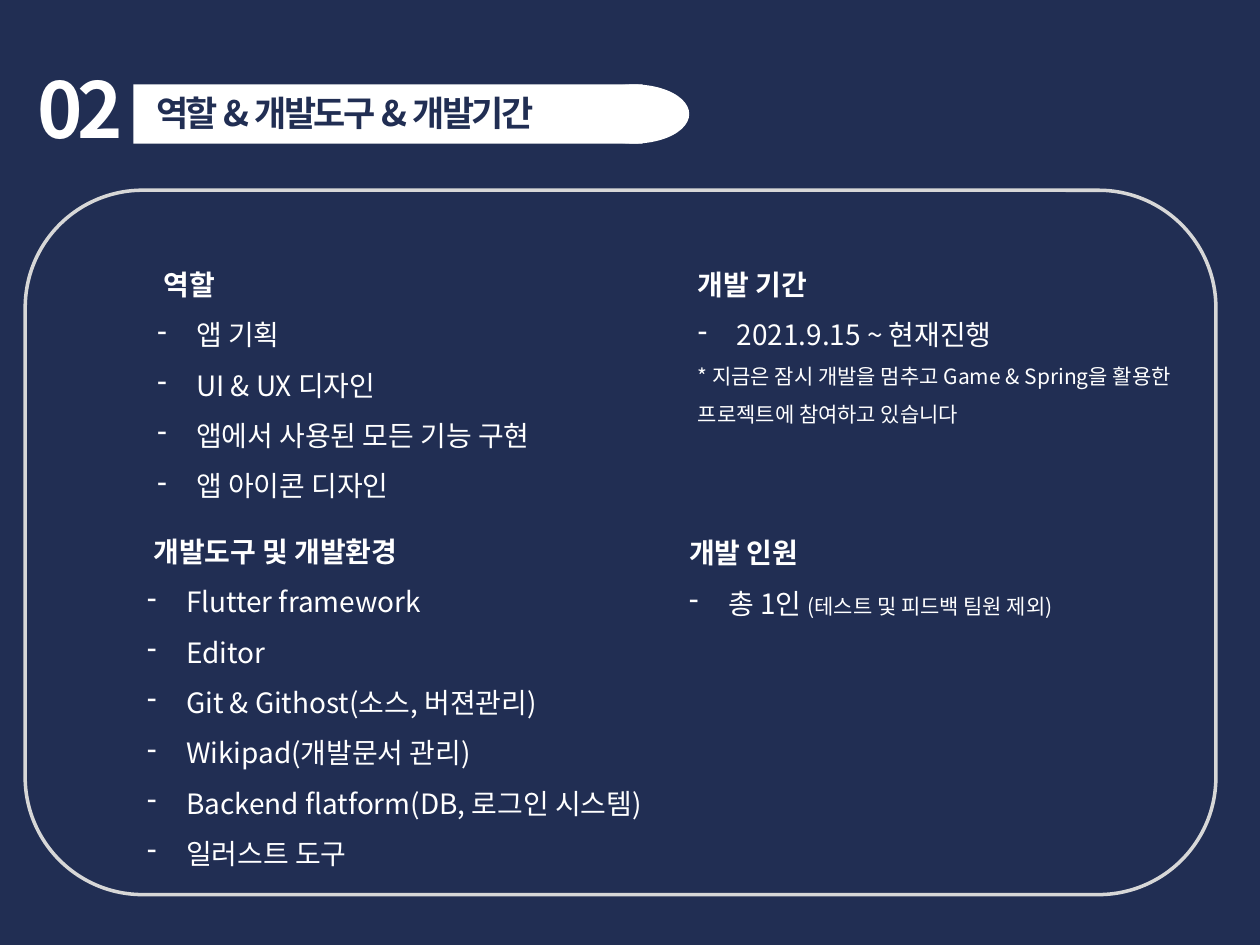
import pptx
import pptx.dml.color
import pptx.enum.shapes
import pptx.enum.text
import pptx.oxml.ns
import pptx.util
from pptx.util import Inches
from lxml import etree

FONT = "Noto Sans CJK KR"
NAVY, WHITE, GRAY = "212E53", "FFFFFF", "D7D7D7"
SHAPES = pptx.enum.shapes.MSO_SHAPE


def color(hex_string):
    return pptx.dml.color.RGBColor.from_string(hex_string)


def add_text(paragraph, text, size=16, bold=False, fill=WHITE, spacing=0):
    """Append a formatted run; spacing is the letter spacing in points."""
    run = paragraph.add_run()
    run.text = text
    run.font.size = pptx.util.Pt(size)
    run.font.bold = bold
    run.font.name = FONT
    run.font.color.rgb = color(fill)
    properties = run.font._element
    if spacing:
        properties.set("spc", str(int(spacing * 100)))
    properties.find(pptx.oxml.ns.qn("a:latin")).addnext(
        properties.makeelement(pptx.oxml.ns.qn("a:ea"), {"typeface": FONT}))


presentation = pptx.Presentation()
presentation.slide_width = Inches(10)
presentation.slide_height = Inches(7.5)
slide = presentation.slides.add_slide(presentation.slide_layouts[6])
slide.background.fill.solid()
slide.background.fill.fore_color.rgb = color(NAVY)

# Title banner: a bar with a rounded right end
banner = slide.shapes.add_group_shape()
for kind, left, width in [(SHAPES.RECTANGLE, 1.06, 4.04), (SHAPES.OVAL, 4.59, 0.88)]:
    shape = banner.shapes.add_shape(kind, Inches(left), Inches(0.67), Inches(width), Inches(0.47))
    shape.shadow.inherit = False
    shape.fill.solid()
    shape.fill.fore_color.rgb = color(WHITE)
    shape.line.fill.background()

frame = slide.shapes.add_shape(
    SHAPES.ROUNDED_RECTANGLE, Inches(0.2), Inches(1.51), Inches(9.45), Inches(5.59))
frame.shadow.inherit = False
frame.fill.background()
frame.line.color.rgb = color(GRAY)
frame.line.width = pptx.util.Pt(2)

titles = [
    ((0.2, 0.44, 1.1, 0.84), "02", 44, WHITE, -3),
    ((1.14, 0.68, 4.85, 0.44), "역할 & 개발도구 & 개발기간", 20, NAVY, -1.5),
]
for position, text, size, fill, spacing in titles:
    box = slide.shapes.add_textbox(*map(Inches, position))
    box.text_frame.word_wrap = True
    box.text_frame.auto_size = pptx.enum.text.MSO_AUTO_SIZE.SHAPE_TO_FIT_TEXT
    add_text(box.text_frame.paragraphs[0], text, size, True, fill, spacing)

# Position, heading, heading indent, bullets, small text after the last bullet, note
sections = [
    ((1.15, 1.94, 4.09, 2.47), "역할", 0.05,
     ["앱 기획", "UI & UX 디자인", "앱에서 사용된 모든 기능 구현", "앱 아이콘 디자인"], "", ""),
    ((1.07, 4.06, 4.3, 3.68), "개발도구 및 개발환경", 0.05,
     ["Flutter framework", "Editor", "Git & Githost(소스, 버젼관리)", "Wikipad(개발문서 관리)",
      "Backend flatform(DB, 로그인 시스템)", "일러스트 도구"], "", ""),
    ((5.44, 1.94, 4.09, 2.27), "개발 기간", 0, ["2021.9.15 ~ 현재진행"], "",
     "* 지금은 잠시 개발을 멈추고 Game & Spring을 활용한 프로젝트에 참여하고 있습니다"),
    ((5.37, 4.07, 4.09, 1.26), "개발 인원", 0, ["총 1인 "], "(테스트 및 피드백 팀원 제외)", ""),
]
for position, heading, indent, bullets, suffix, note in sections:
    box = slide.shapes.add_textbox(*map(Inches, position))
    text_frame = box.text_frame
    text_frame.word_wrap = True
    text_frame.auto_size = pptx.enum.text.MSO_AUTO_SIZE.SHAPE_TO_FIT_TEXT
    paragraph = text_frame.paragraphs[0]
    paragraph._p.get_or_add_pPr().set("marL", str(Inches(indent)))
    add_text(paragraph, heading, bold=True)
    for bullet in bullets:
        paragraph = text_frame.add_paragraph()
        properties = paragraph._p.get_or_add_pPr()
        properties.set("marL", str(Inches(0.31)))
        properties.set("indent", str(Inches(-0.31)))
        etree.SubElement(properties, pptx.oxml.ns.qn("a:buChar")).set("char", "-")
        add_text(paragraph, bullet)
    if suffix:
        add_text(paragraph, suffix, size=12)
    if note:
        add_text(text_frame.add_paragraph(), note, size=12)
    for paragraph in text_frame.paragraphs:
        paragraph.line_spacing = 1.5

presentation.save("out.pptx")
